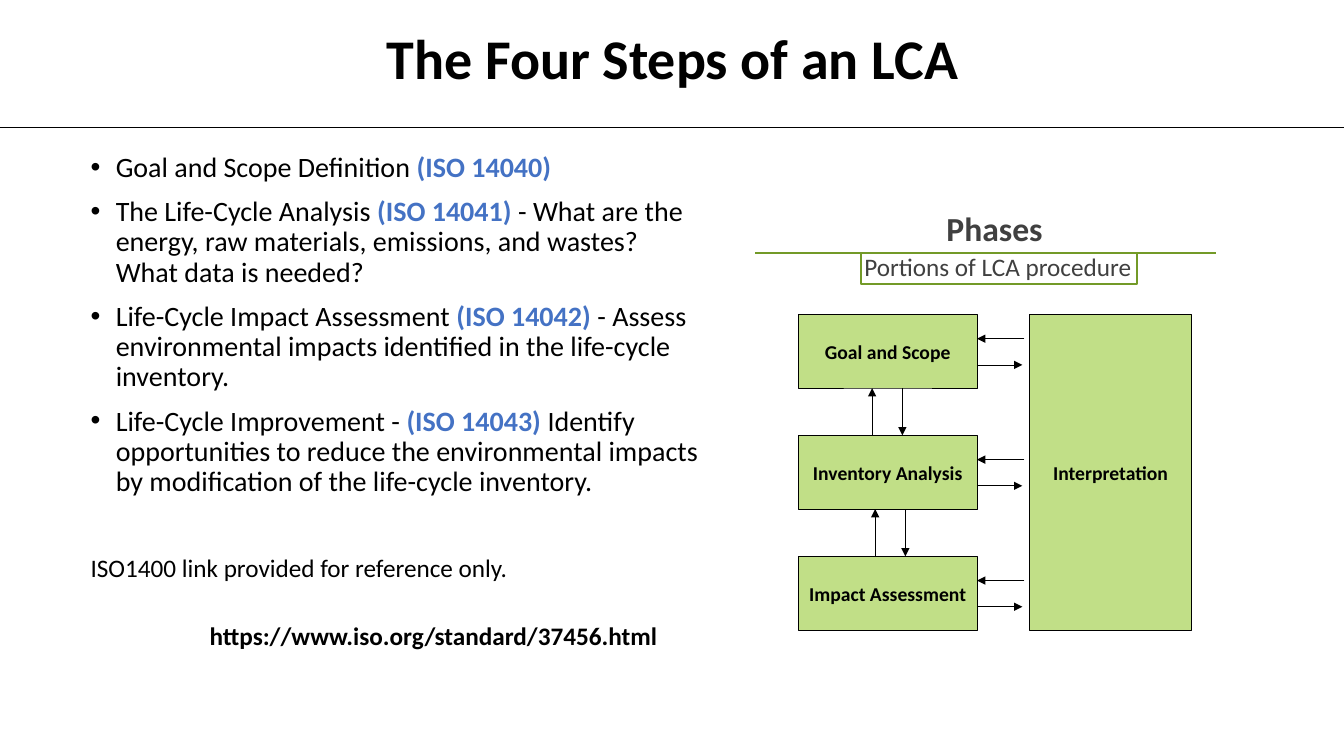
from lxml.etree import SubElement
from pptx import Presentation
from pptx.dml.color import RGBColor
from pptx.enum.shapes import MSO_CONNECTOR as Connector, MSO_SHAPE as Shape
from pptx.enum.text import MSO_ANCHOR as Anchor, PP_ALIGN as Align
from pptx.oxml.ns import qn
from pptx.util import Inches, Pt

WIDTH, HEIGHT = 13.33, 7.5
BLACK, GRAY, BLUE = "000000", "404040", "4472C4"
LIGHT_GREEN, GREEN = "C1DF87", "739A28"

# Flow chart grid: one column of phases beside the interpretation column
PHASES = ["Goal and Scope", "Inventory Analysis", "Impact Assessment"]
PHASE_LEFT, PHASE_TOP = 7.92, 3.12
PHASE_WIDTH, PHASE_HEIGHT, ROW_PITCH = 1.77, 0.73, 1.2
INTERPRETATION_LEFT, INTERPRETATION_WIDTH = 10.21, 1.61

STEPS = [
    ("Goal and Scope Definition ", "(ISO 14040)", ""),
    ("The Life-Cycle Analysis ", "(ISO 14041) ",
     "- What are the energy, raw materials, emissions, and wastes? What data is needed?"),
    ("Life-Cycle Impact Assessment ", "(ISO 14042) ",
     "- Assess environmental impacts identified in the life-cycle inventory."),
    ("Life-Cycle Improvement - ", "(ISO 14043)",
     " Identify opportunities to reduce the environmental impacts "
     "by modification of the life-cycle inventory."),
]


def color(value):
    return RGBColor.from_string(value)


def style_font(font, size, value=BLACK, bold=False):
    font.name, font.size, font.bold = "Calibri", Pt(size), bold
    font.color.rgb = color(value)


def add_text(page, left, top, width, height, text, size, bold=False,
             align=Align.LEFT, spacing=0.9, wrap=True):
    box = page.shapes.add_textbox(*map(Inches, (left, top, width, height)))
    frame = box.text_frame
    frame.word_wrap = wrap
    frame.text = text
    for para in frame.paragraphs:
        para.alignment, para.line_spacing = align, spacing
        for span in para.runs:
            style_font(span.font, size, bold=bold)
    return frame


def add_rule(page, start, end, value=BLACK, weight=0.5, arrow=False):
    rule = page.shapes.add_connector(Connector.STRAIGHT, *map(Inches, (*start, *end)))
    rule.line.color.rgb = color(value)
    rule.line.width = Pt(weight)
    if arrow:
        SubElement(rule.line._get_or_add_ln(), qn("a:tailEnd"), type="triangle")
    SubElement(rule._element.spPr, qn("a:effectLst"))


def add_box(page, left, top, width, height, label="", fill=None, line=BLACK, weight=0.5):
    box = page.shapes.add_shape(Shape.RECTANGLE, *map(Inches, (left, top, width, height)))
    box.shadow.inherit = False
    box.line.color.rgb = color(line)
    box.line.width = Pt(weight)
    if fill:
        box.fill.solid()
        box.fill.fore_color.rgb = color(fill)
    else:
        box.fill.background()
    if label:
        frame = box.text_frame
        frame.text = label
        frame.vertical_anchor = Anchor.MIDDLE
        frame.margin_left = frame.margin_right = Inches(0.05)
        para = frame.paragraphs[0]
        para.alignment = Align.CENTER
        style_font(para.runs[0].font, 14, bold=True)


def indent(para, left, first=0, bullet=None):
    properties = para._p.get_or_add_pPr()
    properties.set("marL", str(Inches(left)))
    properties.set("indent", str(Inches(first)))
    if bullet:
        SubElement(properties, qn("a:buFont"), typeface="Arial")
        SubElement(properties, qn("a:buChar"), char=bullet)


def add_steps(page):
    frame = add_text(page, 0.8, 1.47, 6.25, 3.6, "", 20)
    for index, (name, standard, detail) in enumerate(STEPS):
        para = frame.add_paragraph() if index else frame.paragraphs[0]
        para.line_spacing, para.space_before = 0.9, Pt(10)
        indent(para, 0.25, -0.25, "•")
        for text, value in ((name, BLACK), (standard, BLUE), (detail, BLACK)):
            if text:
                span = para.add_run()
                span.text = text
                style_font(span.font, 20, value, bold=value == BLUE)


def add_phase_heading(page):
    frame = add_text(page, 7.06, 2.06, 5.51, 1, "Phases\nPortions of LCA procedure ", 18,
                     align=Align.CENTER)
    frame.margin_left = frame.margin_right = 0
    heading, caption = frame.paragraphs
    style_font(heading.runs[0].font, 24, GRAY, bold=True)
    style_font(caption.runs[0].font, 18, GRAY)
    heading.space_after = caption.space_before = Pt(2)
    indent(heading, 0.1)
    indent(caption, 0.22)
    add_rule(page, (7.49, 2.51), (12.06, 2.51), GREEN, 1.5)
    add_box(page, 8.54, 2.51, 2.74, 0.31, line=GREEN, weight=1.5)


def add_flow_chart(page):
    right = PHASE_LEFT + PHASE_WIDTH
    last = len(PHASES) - 1
    add_box(page, INTERPRETATION_LEFT, PHASE_TOP, INTERPRETATION_WIDTH,
            last * ROW_PITCH + PHASE_HEIGHT, "Interpretation", LIGHT_GREEN)
    for row, phase in enumerate(PHASES):
        top = PHASE_TOP + row * ROW_PITCH
        bottom = top + PHASE_HEIGHT
        add_box(page, PHASE_LEFT, top, PHASE_WIDTH, PHASE_HEIGHT, phase, LIGHT_GREEN)
        # Exchange with the interpretation
        add_rule(page, (10.16, top + 0.24), (right, top + 0.24), arrow=True)
        add_rule(page, (right, top + 0.5), (10.14, top + 0.5), arrow=True)
        # Exchange with the next phase
        if row < last:
            up = 8.65 + row * 0.03
            down = up + 0.3
            following = top + ROW_PITCH
            add_rule(page, (up, following), (up, bottom), arrow=True)
            add_rule(page, (down, bottom), (down, following), arrow=True)


def main():
    deck = Presentation()
    deck.slide_width, deck.slide_height = Inches(WIDTH), Inches(HEIGHT)
    page = deck.slides.add_slide(deck.slide_layouts[6])

    # Title
    title = add_text(page, 2.83, 0.25, 7.68, 0.71, "The Four Steps of an LCA", 40,
                     bold=True, align=Align.CENTER)
    title.vertical_anchor = Anchor.MIDDLE
    add_rule(page, (0, 1.26), (WIDTH, 1.26))

    # Steps and reference
    add_steps(page)
    add_text(page, 0.8, 5.46, 6.25, 0.4, "ISO1400 link provided for reference only.", 18)
    add_text(page, 1.98, 6.1, 4.68, 0.4, "https://www.iso.org/standard/37456.html", 18,
             bold=True, spacing=1.0, wrap=False)

    # Phases
    add_flow_chart(page)
    add_phase_heading(page)

    deck.save("out.pptx")


if __name__ == "__main__":
    main()
